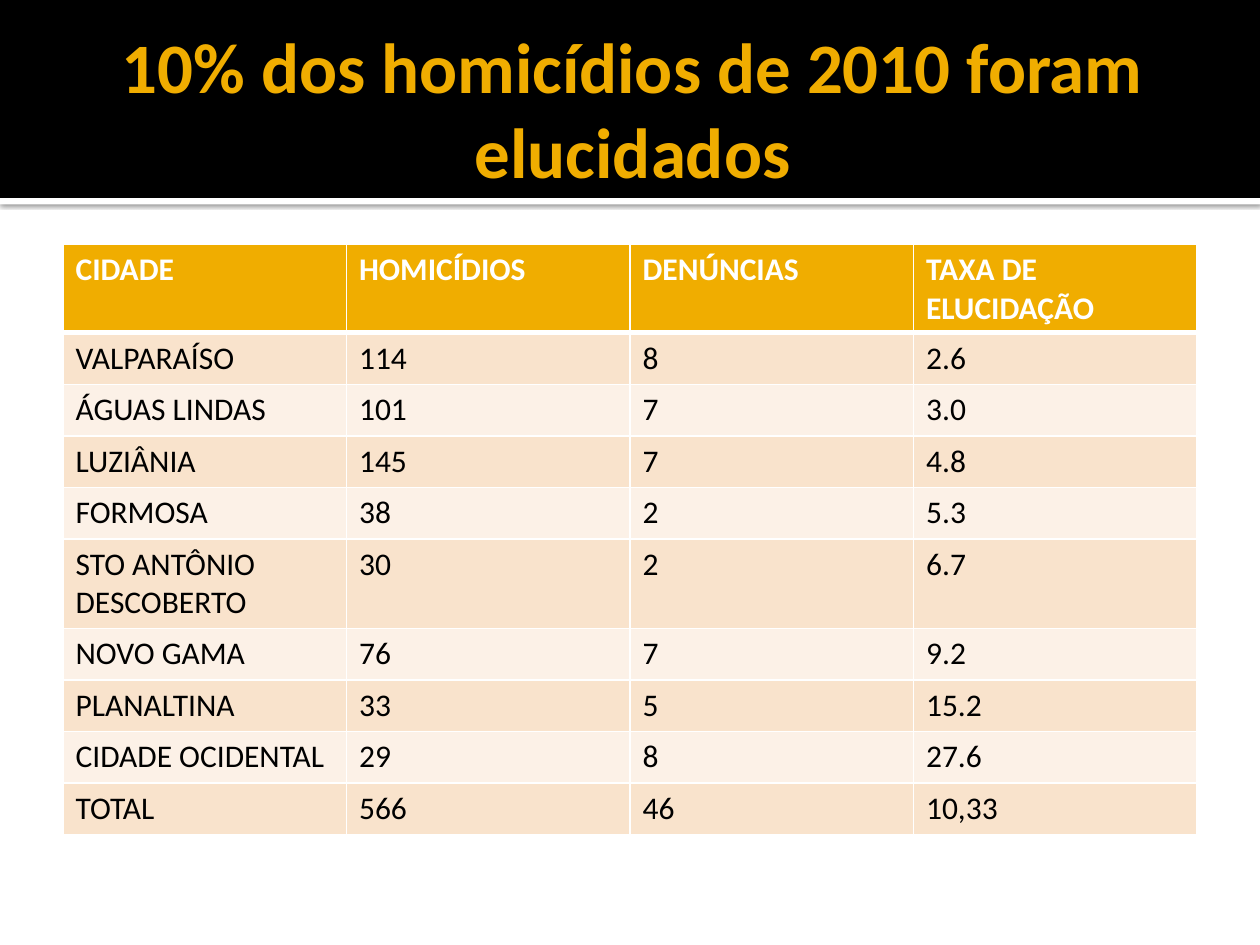
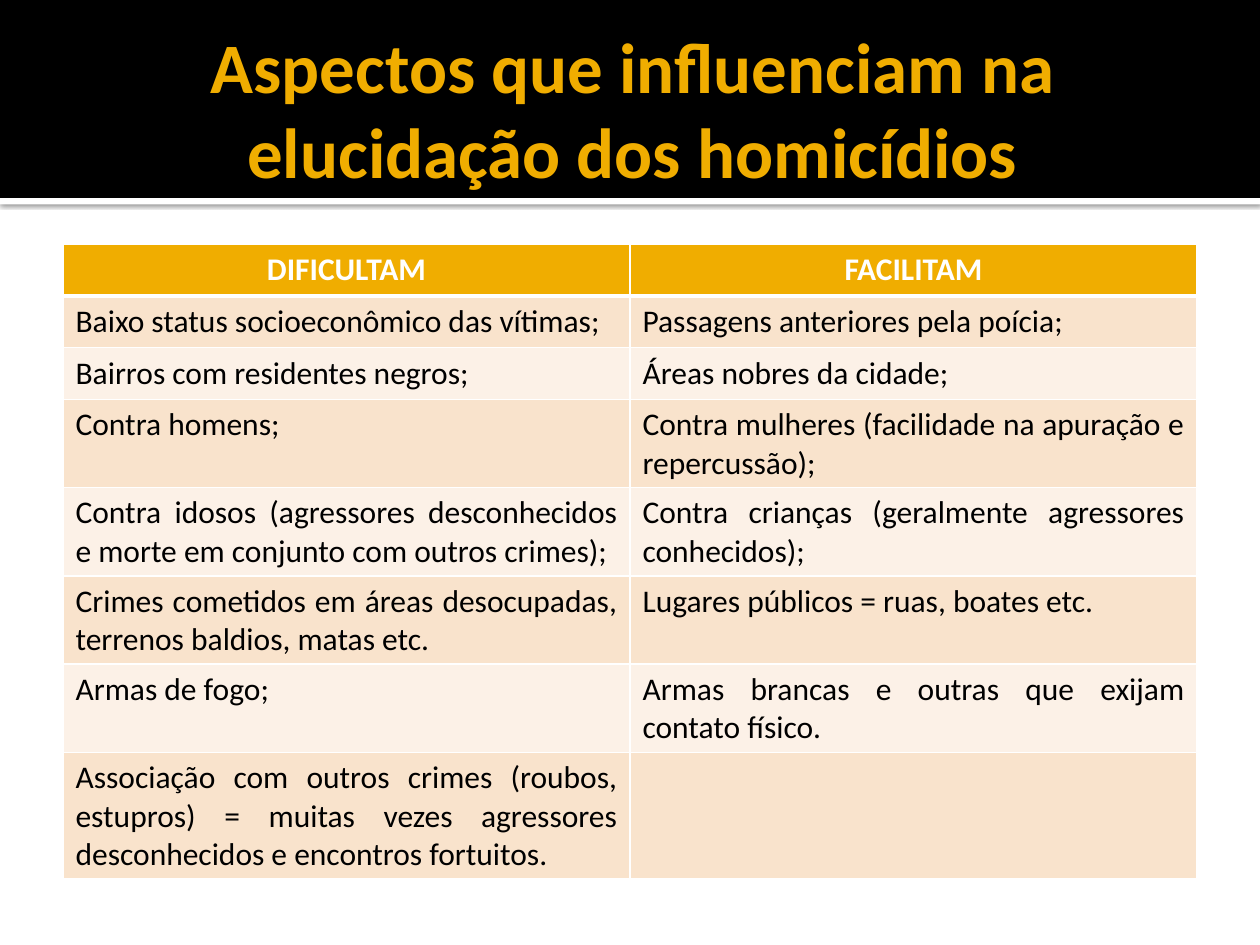
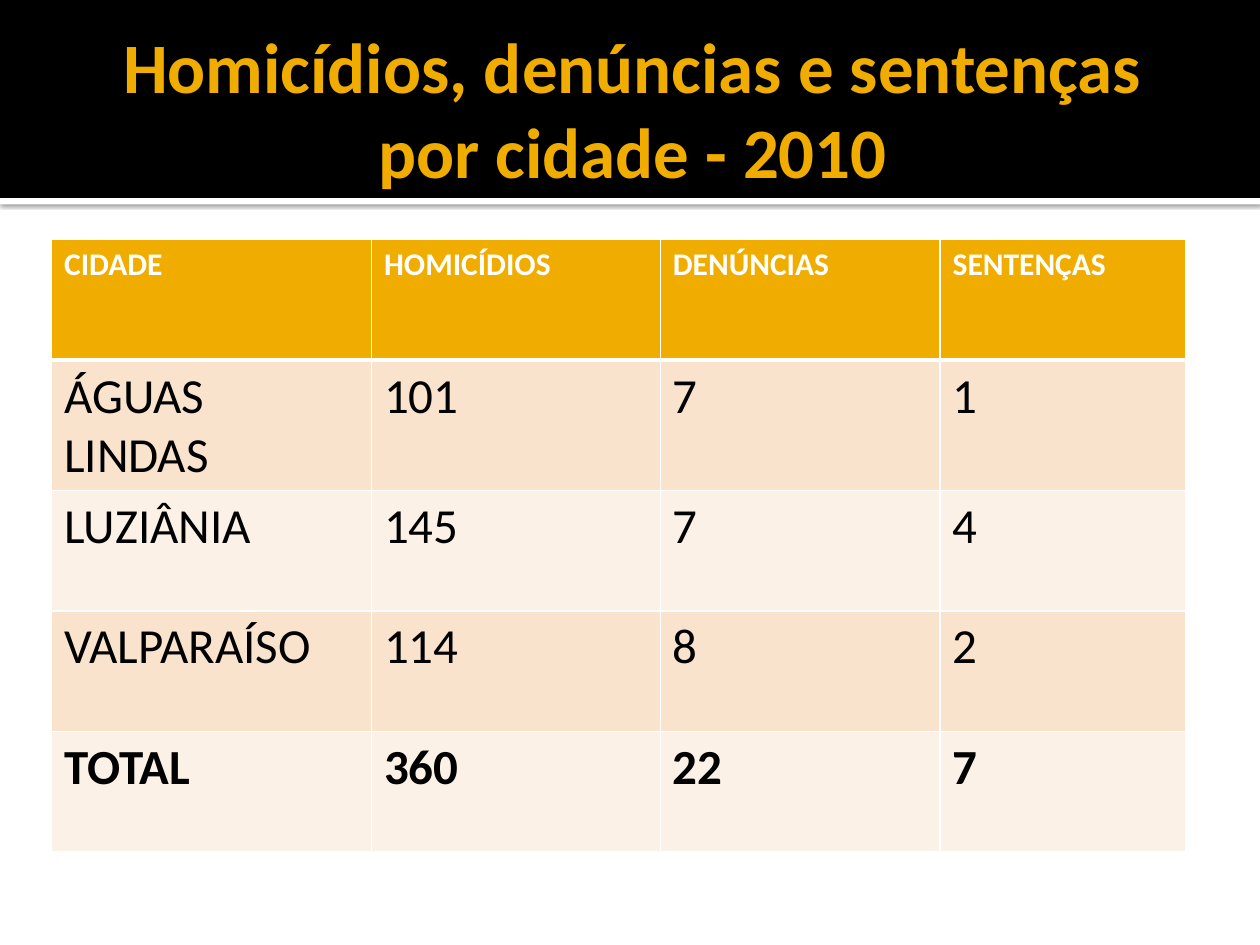
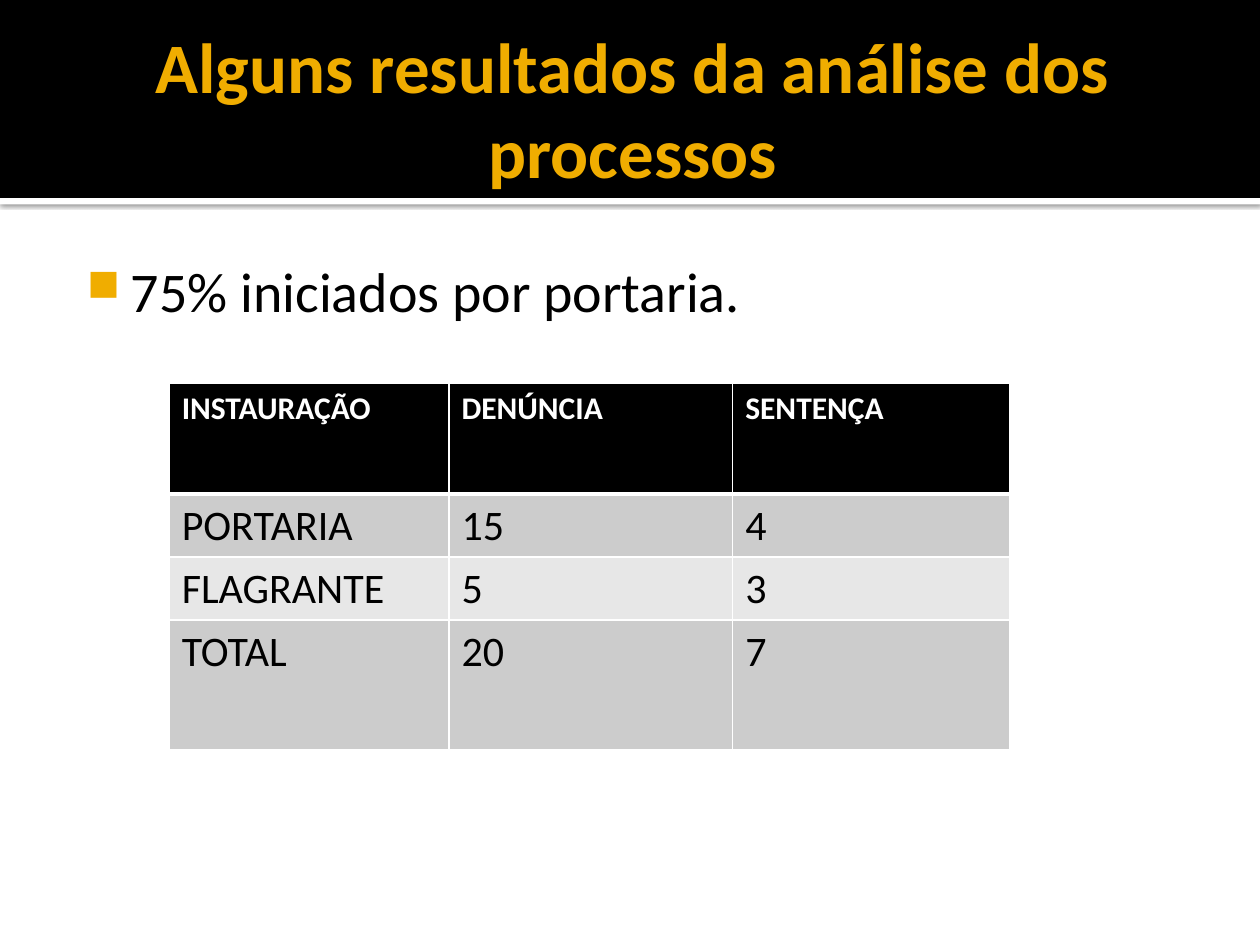
from dataclasses import dataclass

from lxml import etree
from pptx import Presentation
from pptx import util as u
from pptx.dml.color import RGBColor
from pptx.enum import shapes, text
from pptx.oxml import ns

LEFT, CENTER, JUSTIFY = text.PP_ALIGN.LEFT, text.PP_ALIGN.CENTER, text.PP_ALIGN.JUSTIFY


@dataclass(frozen=True)
class Theme:
    font: str = "Calibri"
    black: str = "000000"
    white: str = "FFFFFF"
    gold: str = "F0AD00"
    gold_bands: tuple[str, str] = ("F9E3CC", "FCF1E7")
    grey_bands: tuple[str, str] = ("CCCCCC", "E7E7E7")
    title_size: float = 40.5
    bullet_size: float = 32
    table_size: float = 18
    grid_line: float = 1
    header_line: float = 3


THEME = Theme()


@dataclass(frozen=True)
class Box:
    """Left, top, width and height in centimetres."""
    left: float
    top: float
    width: float
    height: float

    def lengths(self) -> tuple[u.Cm, u.Cm, u.Cm, u.Cm]:
        return u.Cm(self.left), u.Cm(self.top), u.Cm(self.width), u.Cm(self.height)


@dataclass(frozen=True)
class TableSpec:
    left: float
    top: float
    columns: list[float]
    heights: list[float]
    rows: list[list[str]]
    header_align: text.PP_ALIGN = LEFT
    body_align: text.PP_ALIGN = LEFT
    body_size: float = THEME.table_size
    header_fill: str = THEME.gold
    bands: tuple[str, str] = THEME.gold_bands
    bold_total: bool = False


@dataclass(frozen=True)
class SlideSpec:
    title: str
    table: TableSpec
    bullet: str = ""


WIDTH, HEIGHT = 25.4, 19.05
HEADER_BAND = Box(0, 0, WIDTH, 3.99)
WHITE_STRIP = Box(0, 3.99, WIDTH, 0.13)
TITLE_BOX = Box(1.27, 0.43, 22.86, 3.48)
BODY_BOX = Box(1.27, 4.93, 22.86, 12.85)
ROW_HEIGHT = 1.04

# Content
CLEARANCE_ROWS = [
    ["CIDADE", "HOMICÍDIOS", "DENÚNCIAS", "TAXA DE ELUCIDAÇÃO"],
    ["VALPARAÍSO", "114", "8", "2.6"],
    ["ÁGUAS LINDAS", "101", "7", "3.0"],
    ["LUZIÂNIA", "145", "7", "4.8"],
    ["FORMOSA", "38", "2", "5.3"],
    ["STO ANTÔNIO DESCOBERTO", "30", "2", "6.7"],
    ["NOVO GAMA", "76", "7", "9.2"],
    ["PLANALTINA", "33", "5", "15.2"],
    ["CIDADE OCIDENTAL", "29", "8", "27.6"],
    ["TOTAL", "566", "46", "10,33"],
]
FACTOR_ROWS = [
    ["DIFICULTAM", "FACILITAM"],
    ["Baixo status socioeconômico das vítimas;", "Passagens anteriores pela poícia;"],
    ["Bairros com residentes negros;", "Áreas nobres da cidade;"],
    ["Contra homens;", "Contra mulheres (facilidade na apuração e repercussão);"],
    ["Contra idosos (agressores desconhecidos e morte em conjunto com outros crimes);",
     "Contra crianças (geralmente agressores conhecidos);"],
    ["Crimes cometidos em áreas desocupadas, terrenos baldios, matas etc.",
     "Lugares públicos = ruas, boates etc."],
    ["Armas de fogo;", "Armas brancas e outras que exijam contato físico."],
    ["Associação com outros crimes (roubos, estupros) = muitas vezes agressores "
     "desconhecidos e encontros fortuitos.", ""],
]
SENTENCE_ROWS = [
    ["CIDADE", "HOMICÍDIOS", "DENÚNCIAS", "SENTENÇAS"],
    ["ÁGUAS LINDAS", "101", "7", "1"],
    ["LUZIÂNIA", "145", "7", "4"],
    ["VALPARAÍSO", "114", "8", "2"],
    ["TOTAL", "360", "22", "7"],
]
OPENING_ROWS = [
    ["INSTAURAÇÃO", "DENÚNCIA", "SENTENÇA"],
    ["PORTARIA", "15", "4"],
    ["FLAGRANTE", "5", "3"],
    ["TOTAL", "20", "7"],
]

SLIDES = [
    SlideSpec("10% dos homicídios de 2010 foram elucidados",
              TableSpec(1.27, 4.93, [5.715] * 4, [ROW_HEIGHT] * 5 + [1.8] + [ROW_HEIGHT] * 4,
                        CLEARANCE_ROWS)),
    SlideSpec("Aspectos que influenciam na elucidação dos homicídios",
              TableSpec(1.27, 4.93, [11.43] * 2, [ROW_HEIGHT] * 8, FACTOR_ROWS,
                        header_align=CENTER, body_align=JUSTIFY)),
    SlideSpec("Homicídios, denúncias e sentenças por cidade - 2010",
              TableSpec(1.04, 4.83, [6.45, 5.82, 5.64, 4.95], [2.43] * 5, SENTENCE_ROWS,
                        body_size=28, bold_total=True)),
    SlideSpec("Alguns resultados da análise dos processos",
              TableSpec(3.41, 7.72, [5.64, 5.72, 5.59], [2.24, ROW_HEIGHT, ROW_HEIGHT, 2.62],
                        OPENING_ROWS, body_size=24, header_fill=THEME.black,
                        bands=THEME.grey_bands),
              bullet="75% iniciados por portaria."),
]


# Helpers
def add_xml(parent, tag: str, **attributes):
    child = etree.SubElement(parent, ns.qn(tag))
    for key, value in attributes.items():
        child.set(key, str(value))
    return child


def format_runs(paragraph, size: float, color: str, bold: bool = False) -> None:
    for run in paragraph.runs:
        run.font.name = THEME.font
        run.font.size = u.Pt(size)
        run.font.bold = bold
        run.font.color.rgb = RGBColor.from_string(color)


def add_band(slide, box: Box, color: str):
    band = slide.shapes.add_shape(shapes.MSO_SHAPE.RECTANGLE, *box.lengths())
    band.shadow.inherit = False
    band.fill.solid()
    band.fill.fore_color.rgb = RGBColor.from_string(color)
    band.line.fill.background()
    return band


def add_text(slide, box: Box, content: str, margins: tuple[float, float, float, float]):
    frame = slide.shapes.add_textbox(*box.lengths()).text_frame
    frame.word_wrap = True
    frame.margin_left, frame.margin_top, frame.margin_right, frame.margin_bottom = map(u.Cm, margins)
    frame.text = content
    return frame


# Shared header
def draw_header(slide, title: str) -> None:
    strip = add_band(slide, WHITE_STRIP, THEME.white)
    effects = strip._element.spPr.find(ns.qn("a:effectLst"))
    shadow = add_xml(effects, "a:outerShdw", blurRad=u.Pt(2.5), dist=u.Pt(0.8),
                     dir=90 * 60000, algn="tl", rotWithShape=0)
    add_xml(add_xml(shadow, "a:srgbClr", val=THEME.black), "a:alpha", val=60000)
    add_band(slide, HEADER_BAND, THEME.black)

    frame = add_text(slide, TITLE_BOX, title, (0.25, 0.13, 0.13, 0.13))
    frame.vertical_anchor = text.MSO_ANCHOR.MIDDLE
    frame.paragraphs[0].alignment = CENTER
    format_runs(frame.paragraphs[0], THEME.title_size, THEME.gold, bold=True)


def draw_bullet(slide, content: str) -> None:
    paragraph = add_text(slide, BODY_BOX, content, (0.15, 0.25, 0.25, 0.13)).paragraphs[0]
    format_runs(paragraph, THEME.bullet_size, THEME.black)
    properties = paragraph._p.get_or_add_pPr()
    properties.set("marL", str(u.Cm(1.22)))
    properties.set("indent", str(-u.Cm(0.89)))
    add_xml(add_xml(properties, "a:buClr"), "a:srgbClr", val=THEME.gold)
    add_xml(properties, "a:buSzPct", val=80000)
    add_xml(properties, "a:buChar", char="■")


# Tables
def draw_borders(cell, row: int) -> None:
    widths = {"L": THEME.grid_line, "R": THEME.grid_line,
              "T": THEME.header_line if row == 1 else THEME.grid_line,
              "B": THEME.header_line if row == 0 else THEME.grid_line}
    properties = cell._tc.get_or_add_tcPr()
    for side, width in widths.items():
        line = add_xml(properties, f"a:ln{side}", w=u.Pt(width))
        add_xml(add_xml(line, "a:solidFill"), "a:srgbClr", val=THEME.white)


def draw_cell(cell, content: str, row: int, spec: TableSpec) -> None:
    header = row == 0
    total = spec.bold_total and row == len(spec.rows) - 1
    draw_borders(cell, row)
    cell.fill.solid()
    fill = spec.header_fill if header else spec.bands[(row - 1) % 2]
    cell.fill.fore_color.rgb = RGBColor.from_string(fill)
    cell.text_frame.text = content
    paragraph = cell.text_frame.paragraphs[0]
    paragraph.alignment = spec.header_align if header else spec.body_align
    format_runs(paragraph, THEME.table_size if header else spec.body_size,
                THEME.white if header else THEME.black, bold=header or total)


def draw_table(slide, spec: TableSpec) -> None:
    box = Box(spec.left, spec.top, sum(spec.columns), sum(spec.heights))
    table = slide.shapes.add_table(len(spec.rows), len(spec.columns), *box.lengths()).table
    for column, width in zip(table.columns, spec.columns):
        column.width = u.Cm(width)
    for index, (row, height) in enumerate(zip(table.rows, spec.heights)):
        row.height = u.Cm(height)
        for cell, content in zip(row.cells, spec.rows[index]):
            draw_cell(cell, content, index, spec)


def main() -> None:
    deck = Presentation()
    deck.slide_width, deck.slide_height = u.Cm(WIDTH), u.Cm(HEIGHT)
    for spec in SLIDES:
        slide = deck.slides.add_slide(deck.slide_layouts[6])
        draw_header(slide, spec.title)
        if spec.bullet:
            draw_bullet(slide, spec.bullet)
        draw_table(slide, spec.table)
    deck.save("out.pptx")


if __name__ == "__main__":
    main()
